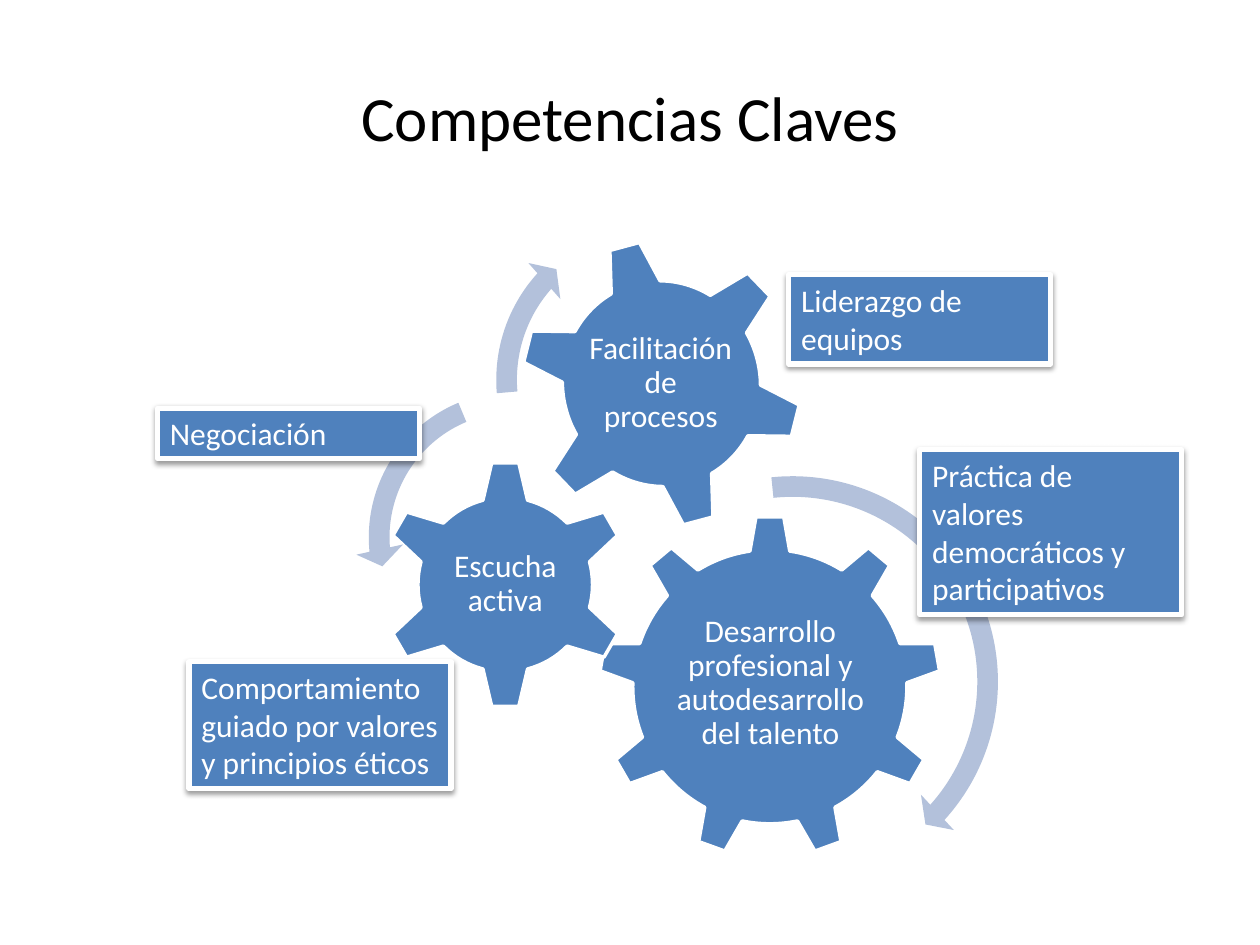
import pptx
import pptx.util
import pptx.dml.color
import pptx.enum.shapes
import pptx.enum.text
import pptx.oxml
import pptx.oxml.ns

Inches = pptx.util.Inches
Pt = pptx.util.Pt
SHAPE = pptx.enum.shapes.MSO_SHAPE
ALIGN = pptx.enum.text.PP_ALIGN
ANCHOR = pptx.enum.text.MSO_ANCHOR

FONT = "Calibri"
BLUE = "4F81BD"
PALE_BLUE = "B3C1DB"
WHITE = "FFFFFF"
BLACK = "000000"
LABEL_WIDTH = 2.08

TITLE = ("Competencias Claves", (0.5, 0.3, 9, 1.25))

GEARS = [
    (SHAPE.GEAR_9, (4.75, 4.09, 2.72, 2.72), 0,
     "Desarrollo profesional y autodesarrollo del talento", (5.3, 4.72, 1.63, 1.4)),
    (SHAPE.GEAR_6, (3.02, 3.65, 1.98, 1.98), 0,
     "Escucha activa", (3.52, 4.15, 0.98, 0.98)),
    (SHAPE.GEAR_6, (4.13, 1.89, 2.24, 2.31), 345,
     "Facilitación de procesos", (4.61, 2.4, 1.27, 1.29)),
]

ARROWS = [
    (SHAPE.CIRCULAR_ARROW, (4.55, 3.67, 3.48, 3.48), (0.047, 2.99, 25.236, 158.454, 0.055)),
    (SHAPE.LEFT_CIRCULAR_ARROW, (2.82, 3, 2.53, 2.53), (0.065, 4.3, 104.891, 148.378, 0.075)),
    (SHAPE.CIRCULAR_ARROW, (3.83, 1.65, 2.73, 2.73), (0.06, 3.941, 133.138, 105.082, 0.07)),
]

LABELS = [
    ("Liderazgo de equipos", 6.26, 2.18, 0.71),
    ("Práctica de valores democráticos y participativos", 7.3, 3.57, 1.31),
    ("Negociación", 1.25, 3.24, 0.4),
    ("Comportamiento guiado por valores y principios éticos", 1.5, 5.25, 1.01),
]

SHADOW = (
    f'<a:outerShdw {pptx.oxml.ns.nsdecls("a")} blurRad="{Pt(3.1)}" dist="{Pt(1.6)}" '
    'dir="5400000" rotWithShape="0">'
    f'<a:srgbClr val="{BLACK}"><a:alpha val="38000"/></a:srgbClr></a:outerShdw>'
)


def color(value):
    return pptx.dml.color.RGBColor.from_string(value)


def add_filled(shapes, kind, box, fill, line_width=0):
    shape = shapes.add_shape(kind, *map(Inches, box))
    shape.shadow.inherit = False
    shape.fill.solid()
    shape.fill.fore_color.rgb = color(fill)
    if line_width:
        shape.line.color.rgb = color(WHITE)
        shape.line.width = Pt(line_width)
    else:
        shape.line.fill.background()
    return shape


def write(shape, text, size, text_color, alignment, anchor):
    frame = shape.text_frame
    frame.word_wrap = True
    frame.vertical_anchor = anchor
    paragraph = frame.paragraphs[0]
    paragraph.alignment = alignment
    run = paragraph.add_run()
    run.text = text
    run.font.name = FONT
    run.font.size = Pt(size)
    run.font.color.rgb = color(text_color)
    return frame


def add_gear(shapes, kind, box, rotation):
    gear = add_filled(shapes, kind, box, BLUE, 2)
    gear.rotation = rotation


def add_gear_text(shapes, text, box):
    textbox = shapes.add_textbox(*map(Inches, box))
    frame = write(textbox, text, 18, WHITE, ALIGN.CENTER, ANCHOR.MIDDLE)
    frame.margin_left = frame.margin_right = Inches(0.03)
    frame.margin_top = frame.margin_bottom = Inches(0.03)
    frame.paragraphs[0].line_spacing = 0.9


def add_arrow(shapes, kind, box, adjustments):
    arrow = add_filled(shapes, kind, box, PALE_BLUE)
    for index, value in enumerate(adjustments):
        arrow.adjustments[index] = value


def add_label(shapes, text, left, top, height):
    label = add_filled(shapes, SHAPE.RECTANGLE, (left, top, LABEL_WIDTH, height), BLUE, 3)
    effects = label._element.spPr.find(pptx.oxml.ns.qn("a:effectLst"))
    effects.append(pptx.oxml.parse_xml(SHADOW))
    frame = write(label, text, 18, WHITE, ALIGN.LEFT, ANCHOR.TOP)
    frame.auto_size = pptx.enum.text.MSO_AUTO_SIZE.SHAPE_TO_FIT_TEXT


def main():
    presentation = pptx.Presentation()
    presentation.slide_width = Inches(10)
    presentation.slide_height = Inches(7.5)
    slide = presentation.slides.add_slide(presentation.slide_layouts[6])

    title, title_box = TITLE
    textbox = slide.shapes.add_textbox(*map(Inches, title_box))
    write(textbox, title, 36, BLACK, ALIGN.CENTER, ANCHOR.MIDDLE)

    diagram = slide.shapes.add_group_shape().shapes
    for kind, box, rotation, text, text_box in GEARS:
        add_gear(diagram, kind, box, rotation)
        add_gear_text(diagram, text, text_box)
    for arrow in ARROWS:
        add_arrow(diagram, *arrow)
    for label in LABELS:
        add_label(slide.shapes, *label)

    presentation.save("out.pptx")


if __name__ == "__main__":
    main()
